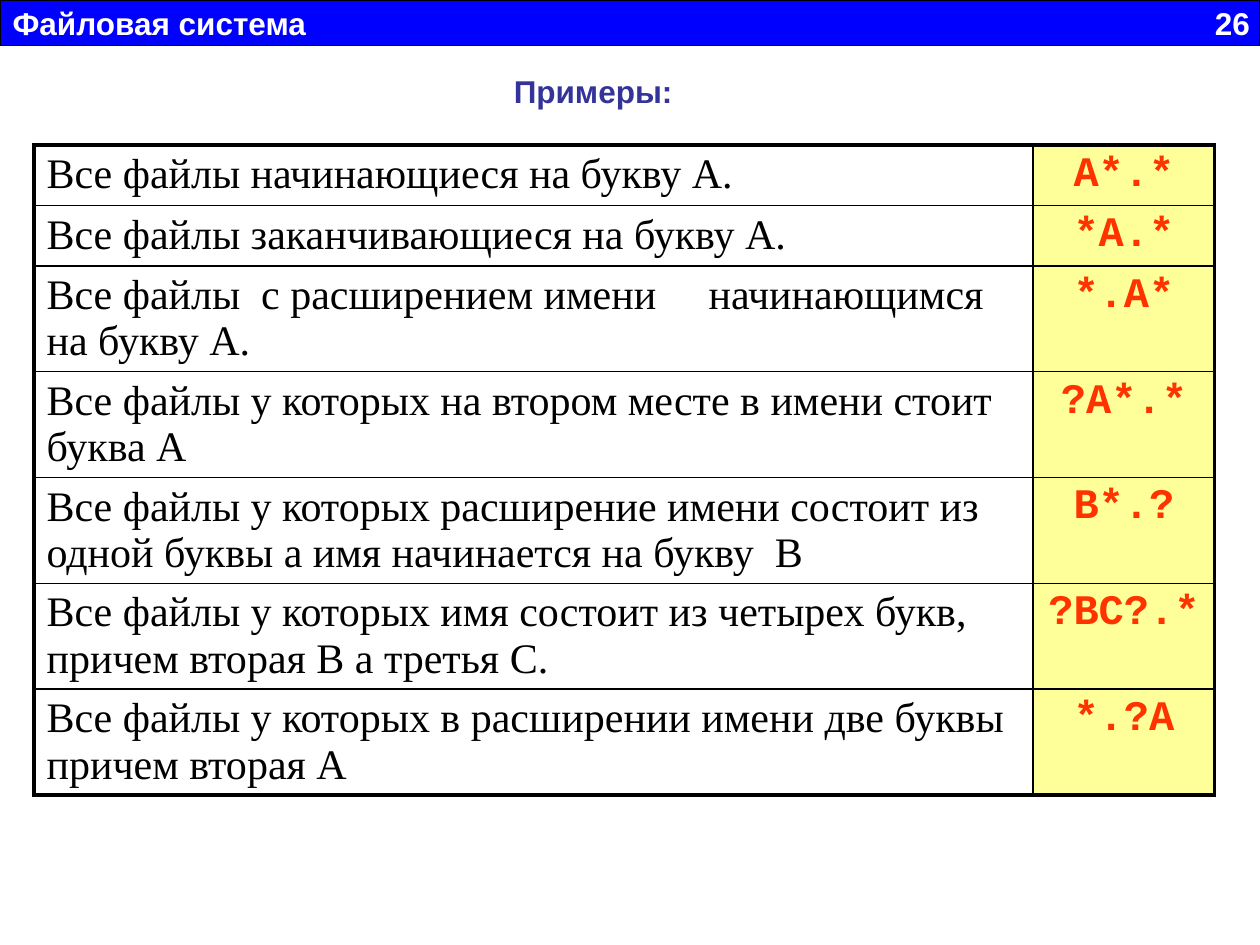
from dataclasses import dataclass

from lxml.etree import SubElement
from pptx import Presentation
from pptx.dml.color import RGBColor as Color
from pptx.enum.text import MSO_ANCHOR as Anchor, MSO_AUTO_SIZE as AutoSize, PP_ALIGN as Align
from pptx.oxml.ns import qn
from pptx.util import Inches, Pt

HEADING = "Файловая система"
PAGE_NUMBER = "26"
SUBHEADING = "Примеры:"

# description, mask, text lines in the row
MASKS = [
    ("Все файлы начинающиеся на букву А.", "А*.*", 1),
    ("Все файлы заканчивающиеся на букву А.", "*А.*", 1),
    ("Все файлы  с расширением имени     начинающимся на букву А.", "*.А*", 2),
    ("Все файлы у которых на втором месте в имени стоит буква А", "?А*.*", 2),
    ("Все файлы у которых расширение имени состоит из одной буквы а имя начинается на букву  В",
     "В*.?", 2),
    ("Все файлы у которых имя состоит из четырех букв, причем вторая В а третья С.", "?ВС?.*", 2),
    ("Все файлы у которых в расширении имени две буквы причем вторая А", "*.?А", 2),
]
COLUMN_WIDTHS = (7.93, 1.44)
ROW_HEIGHTS = {1: 0.48, 2: 0.84}


@dataclass(frozen=True)
class Theme:
    bar: str = "0000FF"
    white: str = "FFFFFF"
    ink: str = "000000"
    subheading: str = "333399"
    mask: str = "FF3300"
    mask_fill: str = "FFFF99"
    heading_size: int = 18
    table_size: int = 24
    outer_line: float = 2.25
    inner_line: float = 1


THEME = Theme()


def style(para, font, size, color, bold, align=Align.LEFT):
    para.alignment = align
    for span in para.runs:
        span.font.name = font
        span.font.size = Pt(size)
        span.font.bold = bold
        span.font.color.rgb = Color.from_string(color)


def add_border(cell, side, width):
    """Draw one side (L, R, T or B); must come before the cell's fill."""
    line = SubElement(cell._tc.get_or_add_tcPr(), qn(f"a:ln{side}"), w=str(Pt(width)))
    fill = SubElement(line, qn("a:solidFill"))
    SubElement(fill, qn("a:srgbClr"), val=THEME.ink)


def add_heading(slide, width):
    bar = slide.shapes.title
    bar.left, bar.top, bar.width, bar.height = 0, 0, width, Inches(0.36)
    bar.fill.solid()
    bar.fill.fore_color.rgb = Color.from_string(THEME.bar)
    bar.line.color.rgb = Color.from_string(THEME.ink)
    bar.line.width = Pt(0.75)
    frame = bar.text_frame
    frame.auto_size = AutoSize.NONE
    frame.vertical_anchor = Anchor.MIDDLE
    frame.margin_right = Inches(0.05)
    frame.text = f"{HEADING}\t{PAGE_NUMBER}"
    para = frame.paragraphs[0]
    style(para, "Arial", THEME.heading_size, THEME.white, True)
    tabs = SubElement(para._p.get_or_add_pPr(), qn("a:tabLst"))
    SubElement(tabs, qn("a:tab"), pos=str(Inches(9.82)), algn="r")


def add_subheading(slide):
    box = slide.shapes.add_textbox(Inches(3.98), Inches(0.52), Inches(1.46), Inches(0.4))
    box.text_frame.word_wrap = False
    box.text_frame.auto_size = AutoSize.SHAPE_TO_FIT_TEXT
    box.text_frame.text = SUBHEADING
    style(box.text_frame.paragraphs[0], "Arial", THEME.heading_size, THEME.subheading, True)


def add_mask_table(slide):
    heights = [ROW_HEIGHTS[lines] for *_, lines in MASKS]
    table = slide.shapes.add_table(
        len(MASKS), len(COLUMN_WIDTHS), Inches(0.27), Inches(1.15),
        Inches(sum(COLUMN_WIDTHS)), Inches(sum(heights))).table
    table.first_row = table.horz_banding = False
    for column, width in zip(table.columns, COLUMN_WIDTHS):
        column.width = Inches(width)

    last_row, last_column = len(MASKS) - 1, len(COLUMN_WIDTHS) - 1
    for r, (description, mask, _) in enumerate(MASKS):
        table.rows[r].height = Inches(heights[r])
        for c, text in enumerate((description, mask)):
            cell = table.cell(r, c)
            outer = {"L": c == 0, "R": c == last_column, "T": r == 0, "B": r == last_row}
            for side, is_outer in outer.items():
                add_border(cell, side, THEME.outer_line if is_outer else THEME.inner_line)
            cell.text = text
            para = cell.text_frame.paragraphs[0]
            if c == last_column:
                cell.fill.solid()
                cell.fill.fore_color.rgb = Color.from_string(THEME.mask_fill)
                style(para, "Courier New", THEME.table_size, THEME.mask, True, Align.CENTER)
            else:
                cell.fill.background()
                style(para, "Times New Roman", THEME.table_size, THEME.ink, False)


def main():
    deck = Presentation()
    deck.slide_width, deck.slide_height = Inches(10), Inches(7.5)
    title_only = deck.slide_layouts[5]
    slide = deck.slides.add_slide(title_only)
    add_heading(slide, deck.slide_width)
    add_mask_table(slide)
    add_subheading(slide)
    deck.save("out.pptx")


if __name__ == "__main__":
    main()
